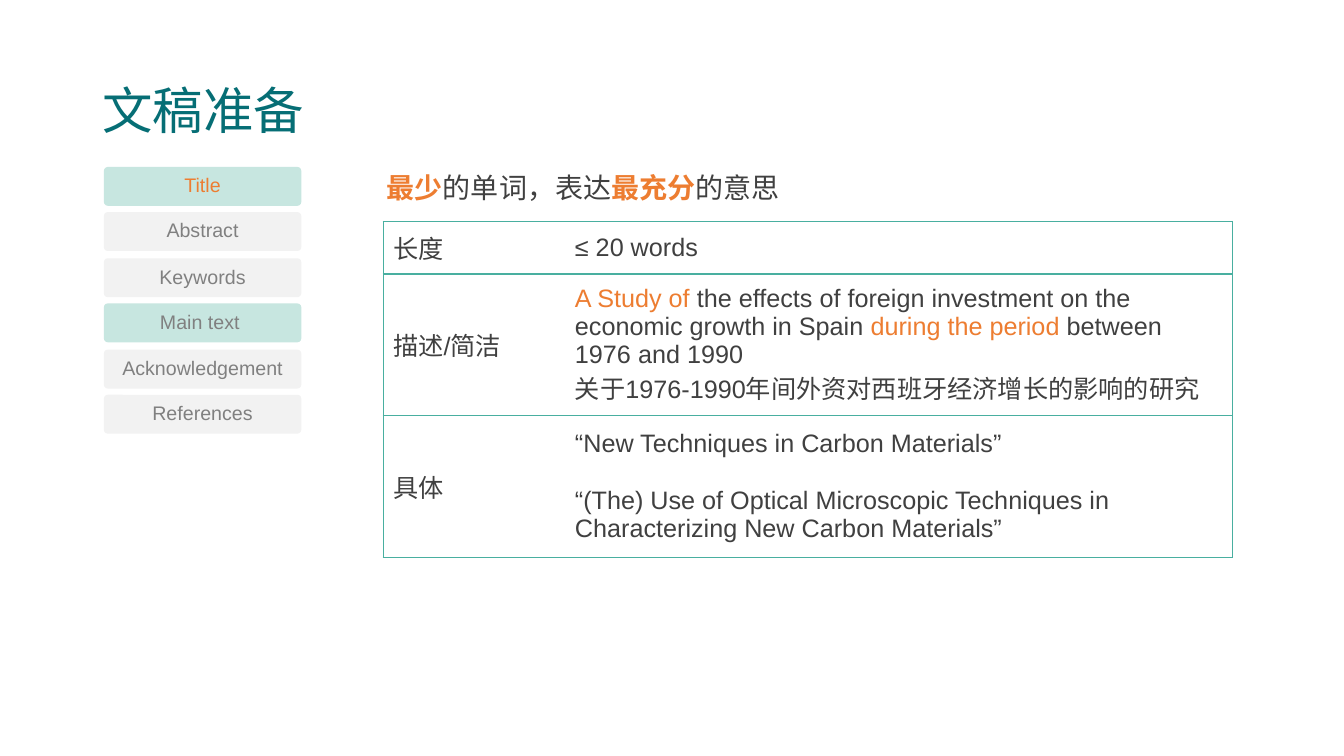
from dataclasses import dataclass

from lxml.etree import SubElement
from pptx import Presentation
from pptx.dml.color import RGBColor
from pptx.enum.shapes import MSO_SHAPE as Shape
from pptx.enum.text import MSO_ANCHOR as Anchor, PP_ALIGN as Align
from pptx.oxml import parse_xml
from pptx.oxml.ns import nsdecls, qn
from pptx.util import Pt

EMU_PER_PX = 9525
TEAL = RGBColor(0x06, 0x6E, 0x75)
ORANGE = RGBColor(0xED, 0x7D, 0x31)
INK = RGBColor(0x40, 0x40, 0x40)
GRAY = RGBColor(0x80, 0x80, 0x80)
MINT = RGBColor(0xC7, 0xE6, 0xE0)
PALE = RGBColor(0xF2, 0xF2, 0xF2)
WHITE = RGBColor(0xFF, 0xFF, 0xFF)
RULE = RGBColor(0x49, 0xAF, 0xA0)
LATIN = "Arial"
HAN = "Noto Sans CJK SC"


@dataclass(frozen=True)
class Span:
    text: str
    color: RGBColor = INK
    bold: bool = False


@dataclass(frozen=True)
class Line:
    spans: tuple[Span, ...]
    before: float = 0
    after: float = 0


@dataclass(frozen=True)
class Section:
    label: str
    fill: RGBColor = PALE
    color: RGBColor = GRAY


@dataclass(frozen=True)
class Criterion:
    name: str
    height: int
    lines: tuple[Line, ...]


SECTIONS = (
    Section("Title", MINT, ORANGE),
    Section("Abstract"),
    Section("Keywords"),
    Section("Main text ", MINT),
    Section("Acknowledgement"),
    Section("References"),
)
SECTION_LEFT, SECTION_WIDTH, SECTION_HEIGHT = 99, 188, 37
FIRST_TOP, LAST_TOP = 159, 376

HEADLINE = (
    Span("最少", ORANGE, True),
    Span("的单词，表达"),
    Span("最充分", ORANGE, True),
    Span("的意思"),
)
CRITERIA = (
    Criterion("长度", 50, (Line((Span("≤ 20 words"),)),)),
    Criterion("描述/简洁", 135, (
        Line((
            Span("A Study of ", ORANGE),
            Span("the effects of foreign investment on the economic growth in Spain "),
            Span("during the period", ORANGE),
            Span(" between 1976 and 1990"),
        )),
        Line((Span("关于1976-1990年间外资对西班牙经济增长的影响的研究"),), after=6),
    )),
    Criterion("具体", 135, (
        Line((Span("“New Techniques in Carbon Materials”"),)),
        Line((Span("“(The) Use of Optical Microscopic Techniques in "
                   "Characterizing New Carbon Materials”"),), before=20.5),
    )),
)
COLUMN_WIDTHS = (173, 636)


def px(*lengths: int) -> list[int]:
    return [length * EMU_PER_PX for length in lengths]


def add_spans(paragraph, spans: tuple[Span, ...], size: int, latin: str = LATIN) -> None:
    for span in spans:
        run = paragraph.add_run()
        run.text = span.text
        run.font.size = Pt(size)
        run.font.bold = span.bold
        run.font.color.rgb = span.color
        run.font.name = latin
        SubElement(run.font._element, qn("a:ea"), typeface=HAN)


def add_title(slide) -> None:
    title = slide.shapes.title
    title.left, title.top, title.width, title.height = px(88, 38, 1104, 139)
    title.text_frame.vertical_anchor = Anchor.MIDDLE
    paragraph = title.text_frame.paragraphs[0]
    paragraph.alignment = Align.LEFT
    paragraph.line_spacing = 0.9
    add_spans(paragraph, (Span("文稿准备", TEAL),), 36)


def add_headline(slide) -> None:
    frame = slide.shapes.add_textbox(*px(359, 142, 786, 69)).text_frame
    frame.word_wrap = True
    paragraph = frame.paragraphs[0]
    paragraph.line_spacing = 1.5
    add_spans(paragraph, HEADLINE, 20, HAN)


def add_section(slide, section: Section, top: int) -> None:
    tab = slide.shapes.add_shape(
        Shape.ROUNDED_RECTANGLE, *px(SECTION_LEFT, top, SECTION_WIDTH, SECTION_HEIGHT))
    tab.adjustments[0] = 0.1
    tab.shadow.inherit = False
    tab.fill.solid()
    tab.fill.fore_color.rgb = section.fill
    tab.line.fill.background()
    frame = tab.text_frame
    frame.word_wrap = True
    frame.vertical_anchor = Anchor.MIDDLE
    frame.margin_left, frame.margin_top, frame.margin_right, frame.margin_bottom = px(1, 1, 1, 1)
    paragraph = frame.paragraphs[0]
    paragraph.alignment = Align.CENTER
    paragraph.line_spacing = 0.9
    add_spans(paragraph, (Span(section.label, section.color),), 14)


def set_borders(cell, sides: str) -> None:
    """Rule the sides named among L, R, T and B; the rest stay bare."""
    properties = cell._tc.get_or_add_tcPr()
    for index, side in enumerate("LRTB"):
        paint = (f'<a:solidFill><a:srgbClr val="{RULE}"/></a:solidFill>'
                 if side in sides else "<a:noFill/>")
        properties.insert(index, parse_xml(
            f'<a:ln{side} {nsdecls("a")} w="{Pt(1)}">{paint}</a:ln{side}>'))


def fill_cell(cell, lines: tuple[Line, ...], sides: str) -> None:
    cell.fill.solid()
    cell.fill.fore_color.rgb = WHITE
    cell.vertical_anchor = Anchor.MIDDLE
    set_borders(cell, sides)
    frame = cell.text_frame
    for index, line in enumerate(lines):
        paragraph = frame.add_paragraph() if index else frame.paragraphs[0]
        paragraph.space_before = Pt(line.before)
        paragraph.space_after = Pt(line.after)
        add_spans(paragraph, line.spans, 18)


def add_criteria(slide) -> None:
    heights = [criterion.height for criterion in CRITERIA]
    table = slide.shapes.add_table(
        len(CRITERIA), len(COLUMN_WIDTHS),
        *px(365, 211, sum(COLUMN_WIDTHS), sum(heights))).table
    table.first_row = table.horz_banding = False
    for column, width in zip(table.columns, px(*COLUMN_WIDTHS)):
        column.width = width
    for row, height, criterion in zip(table.rows, px(*heights), CRITERIA):
        row.height = height
        fill_cell(row.cells[0], (Line((Span(criterion.name),)),), "LTB")
        fill_cell(row.cells[1], criterion.lines, "RTB")


def main() -> None:
    deck = Presentation()
    deck.slide_width, deck.slide_height = px(1280, 720)
    slide = deck.slides.add_slide(deck.slide_layouts[5])
    add_title(slide)
    add_headline(slide)
    add_criteria(slide)
    pitch = (LAST_TOP - FIRST_TOP) / (len(SECTIONS) - 1)
    for index, section in enumerate(SECTIONS):
        add_section(slide, section, FIRST_TOP + round(index * pitch))
    deck.save("out.pptx")


if __name__ == "__main__":
    main()
